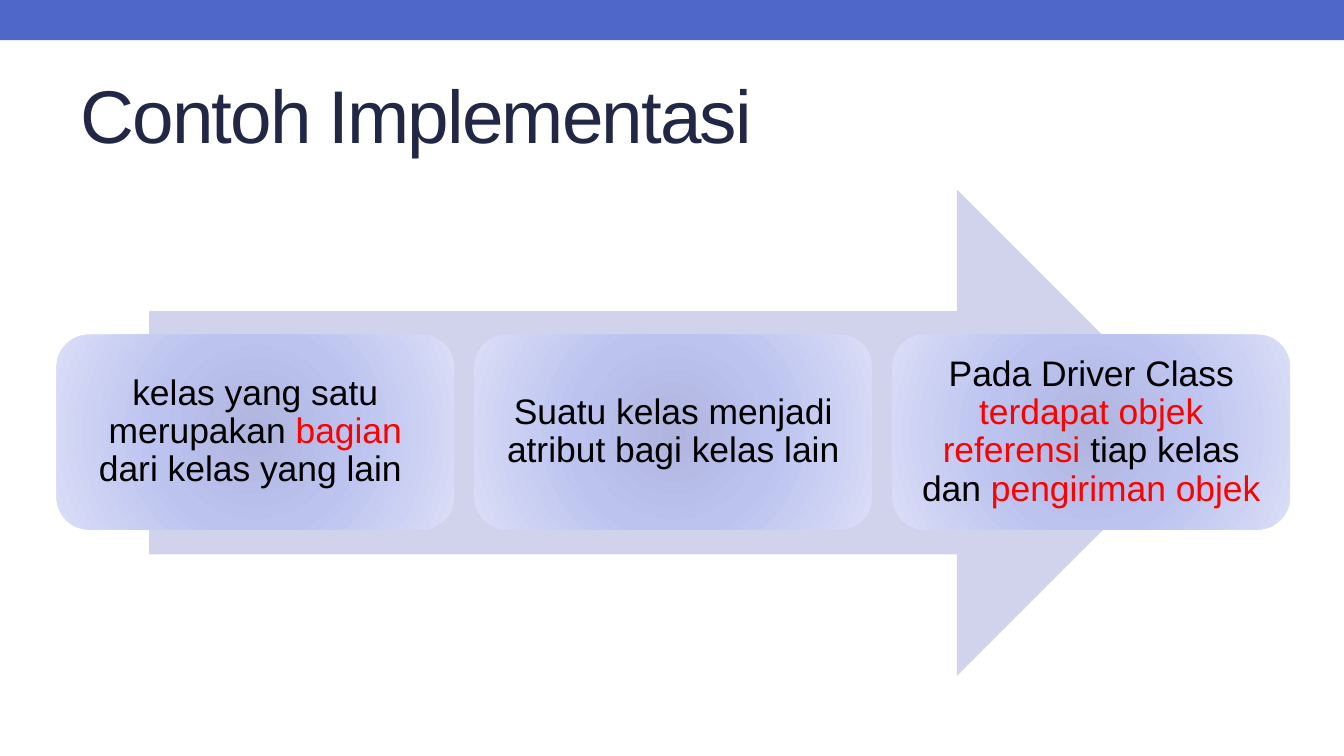
from pptx import Presentation
from pptx.dml.color import RGBColor
from pptx.enum.shapes import MSO_SHAPE
from pptx.enum.text import MSO_ANCHOR, PP_ALIGN
from pptx.oxml import parse_xml
from pptx.oxml.ns import nsdecls, qn
from pptx.util import Inches, Pt

RECTANGLE = MSO_SHAPE.RECTANGLE
RIGHT_ARROW = MSO_SHAPE.RIGHT_ARROW
ROUNDED = MSO_SHAPE.ROUNDED_RECTANGLE
MIDDLE = MSO_ANCHOR.MIDDLE
CENTER = PP_ALIGN.CENTER

BLACK, RED = "000000", "FF0000"
CARD_GRADIENT = [(0, "AFB5DE"), (45, "BCC3EF"), (100, "DADEF7")]
WIDTH = 10
HEIGHT = WIDTH * 9 / 16
CARD_LEFT, CARD_TOP, CARD_WIDTH, CARD_HEIGHT = 0.42, 2.49, 2.96, 1.45
CARD_STEP = CARD_WIDTH + 0.15

STEPS = [
    [("kelas yang satu merupakan ", BLACK), ("bagian ", RED),
     ("dari kelas yang lain ", BLACK)],
    [("Suatu kelas menjadi atribut bagi kelas lain", BLACK)],
    [("Pada Driver Class ", BLACK), ("terdapat objek referensi ", RED),
     ("tiap kelas dan ", BLACK), ("pengiriman objek", RED)],
]


def color(hex_code):
    return RGBColor.from_string(hex_code)


def add_plain_shape(kind, left, top, width, height, fill):
    """Add a shape in one colour, without outline or shadow."""
    shape = slide.shapes.add_shape(
        kind, Inches(left), Inches(top), Inches(width), Inches(height))
    shape.fill.solid()
    shape.fill.fore_color.rgb = color(fill)
    shape.line.fill.background()
    shape.shadow.inherit = False
    return shape


prs = Presentation()
prs.slide_width, prs.slide_height = Inches(WIDTH), Inches(HEIGHT)
slide = prs.slides.add_slide(prs.slide_layouts[6])

add_plain_shape(RECTANGLE, 0, 0, WIDTH, 0.3, "4E67C8")
add_plain_shape(RIGHT_ARROW, 1.11, 1.41, 7.82, 3.62, "D0D3EB")

stops = "".join(
    f'<a:gs pos="{share * 1000}"><a:srgbClr val="{shade}"/></a:gs>'
    for share, shade in CARD_GRADIENT)
radial_fill = (
    f'<a:gradFill {nsdecls("a")} rotWithShape="1"><a:gsLst>{stops}</a:gsLst>'
    '<a:path path="circle"><a:fillToRect l="100000" t="100000" r="100000" b="100000"/>'
    '</a:path></a:gradFill>')
space_after = f'<a:spcAft {nsdecls("a")}><a:spcPct val="35000"/></a:spcAft>'

for column, phrases in enumerate(STEPS):
    card = add_plain_shape(ROUNDED, CARD_LEFT + column * CARD_STEP, CARD_TOP,
                           CARD_WIDTH, CARD_HEIGHT, CARD_GRADIENT[0][1])
    properties = card._element.spPr
    properties.replace(properties.find(qn("a:solidFill")), parse_xml(radial_fill))

    frame = card.text_frame
    frame.word_wrap = True
    frame.vertical_anchor = MIDDLE
    frame.margin_left = frame.margin_right = Inches(0.08)
    frame.margin_top = frame.margin_bottom = Inches(0.08)
    paragraph = frame.paragraphs[0]
    paragraph.alignment = CENTER
    paragraph.line_spacing = 0.9
    paragraph._p.pPr.find(qn("a:lnSpc")).addnext(parse_xml(space_after))
    paragraph.font.size = Pt(19)
    paragraph.font.name = "Arial"
    for words, shade in phrases:
        run = paragraph.add_run()
        run.text = words
        run.font.color.rgb = color(shade)

title = slide.shapes.add_textbox(Inches(0.5), Inches(0.44), Inches(9), Inches(0.81))
title.text_frame.word_wrap = True
title.text_frame.vertical_anchor = MIDDLE
heading = title.text_frame.paragraphs[0]
heading.text = "Contoh Implementasi"
heading.font.size = Pt(40)
heading.font.name = "Arial"
heading.font.color.rgb = color("212745")
heading.runs[0]._r.get_or_add_rPr().set("spc", "-100")

prs.save("out.pptx")
